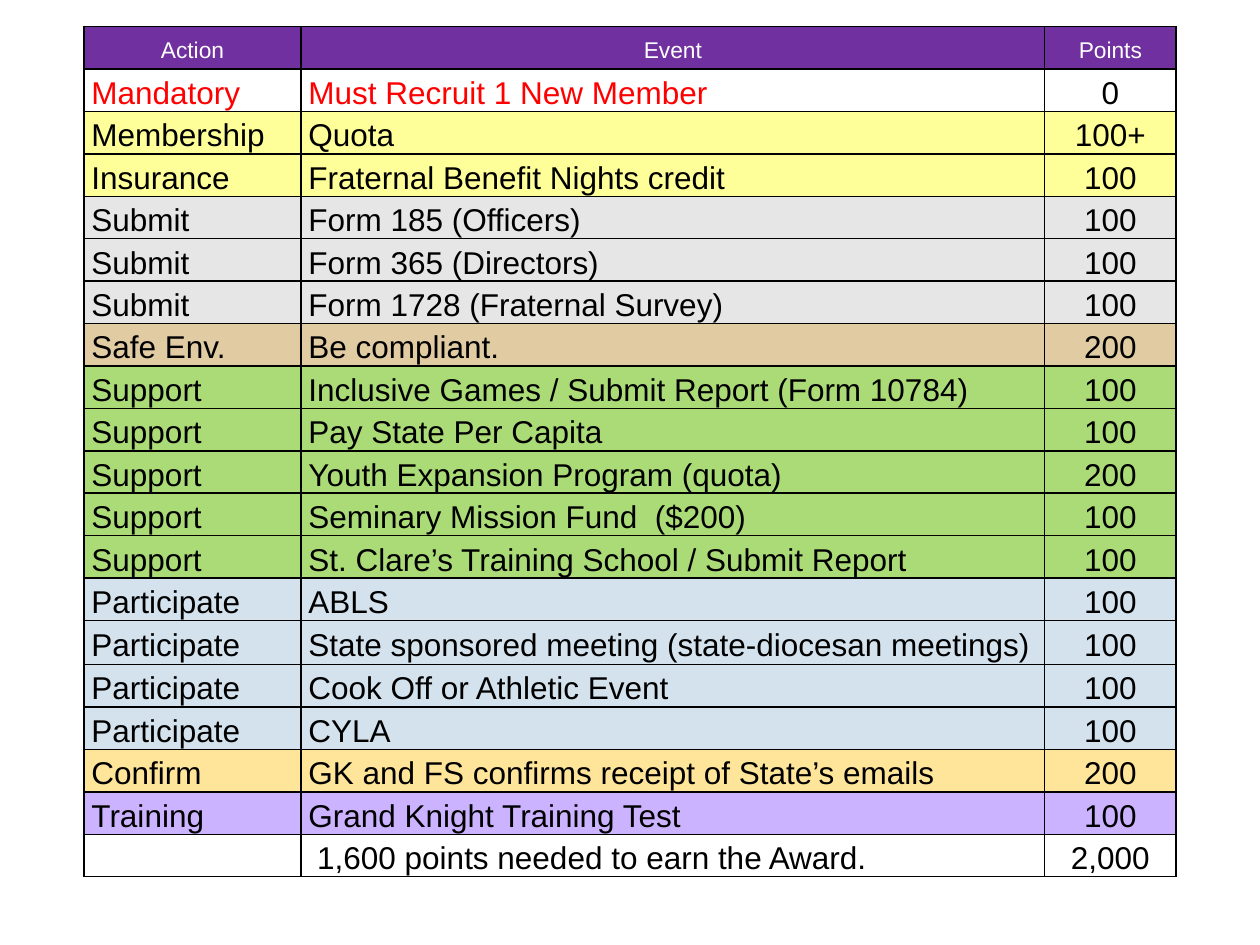
from dataclasses import dataclass
from lxml.etree import SubElement as Sub
from pptx import Presentation
from pptx.dml.color import RGBColor as Rgb
from pptx.enum.text import MSO_ANCHOR as Anchor, PP_ALIGN as Align
from pptx.oxml.ns import qn
from pptx.util import Pt


@dataclass(frozen=True)
class Theme:
    font: str = "Arial"
    head: int = 13
    body: int = 18
    white: str = "FFFFFF"
    black: str = "000000"
    red: str = "FF0000"
    purple: str = "7030A0"
    yellow: str = "FFFF99"
    gray: str = "E7E6E6"
    tan: str = "E0CBA3"
    green: str = "ABDB77"
    blue: str = "D4E2ED"
    gold: str = "FFE599"
    lilac: str = "CCB3FF"


THEME = Theme()
LEFT, TOP = 48, 15.25
COLS = (124, 425, 75)
ROW, TALL = 24.25, 25.25
TALL_ROW = 14
HEAD = ("Action", "Event", "Points")
GROUPS = (
    ("Mandatory", None, (("Must Recruit 1 New Member", "0"),)),
    ("Membership", THEME.yellow, (("Quota", "100+"),)),
    ("Insurance", THEME.yellow, (("Fraternal Benefit Nights credit", "100"),)),
    ("Submit", THEME.gray, (
        ("Form 185 (Officers)", "100"),
        ("Form 365 (Directors)", "100"),
        ("Form 1728 (Fraternal Survey)", "100"),
    )),
    ("Safe Env.", THEME.tan, (("Be compliant.", "200"),)),
    ("Support", THEME.green, (
        ("Inclusive Games / Submit Report (Form 10784)", "100"),
        ("Pay State Per Capita", "100"),
        ("Youth Expansion Program (quota)", "200"),
        ("Seminary Mission Fund  ($200)", "100"),
        ("St. Clare’s Training School / Submit Report", "100"),
    )),
    ("Participate", THEME.blue, (
        ("ABLS", "100"),
        ("State sponsored meeting (state-diocesan meetings)", "100"),
        ("Cook Off or Athletic Event", "100"),
        ("CYLA", "100"),
    )),
    ("Confirm", THEME.gold, (("GK and FS confirms receipt of State’s emails", "200"),)),
    ("Training", THEME.lilac, (("Grand Knight Training Test", "100"),)),
    ("", None, ((" 1,600 points needed to earn the Award.", "2,000"),)),
)


def add_edges(cell):
    props = cell._tc.get_or_add_tcPr()
    for i, side in enumerate(("a:lnL", "a:lnR", "a:lnT", "a:lnB")):
        line = props.makeelement(qn(side), {"w": str(Pt(1))})
        fill = Sub(line, qn("a:solidFill"))
        Sub(fill, qn("a:srgbClr"), val=THEME.black)
        props.insert(i, line)


def set_fill(cell, color):
    if color:
        cell.fill.solid()
        cell.fill.fore_color.rgb = Rgb.from_string(color)
    else:
        cell.fill.background()


def set_text(cell, text, size, color, align):
    cell.vertical_anchor = Anchor.MIDDLE
    cell.margin_left = cell.margin_right = Pt(4.3)
    cell.margin_top, cell.margin_bottom = Pt(0.7), Pt(0)
    para = cell.text_frame.paragraphs[0]
    para.alignment = align
    para.line_spacing = 1.15
    para.space_before = para.space_after = Pt(3)
    if text:
        run = para.add_run()
        run.text = text
        run.font.name = THEME.font
        run.font.size = Pt(size)
        run.font.color.rgb = Rgb.from_string(color)


def fill_row(row, texts, fill, size, colors, aligns):
    for cell, text, color, align in zip(row.cells, texts, colors, aligns):
        set_text(cell, text, size, color, align)
        set_fill(cell, fill)
        add_edges(cell)


def add_grid(slide):
    items = [((action, event, points), fill)
             for action, fill, events in GROUPS for event, points in events]
    count = len(items) + 1
    frame = slide.shapes.add_table(count, len(COLS), Pt(LEFT), Pt(TOP),
                                   Pt(sum(COLS)), Pt(ROW * (count - 1) + TALL))
    table = frame.table
    table.first_row = table.horz_banding = False
    for col, width in zip(table.columns, COLS):
        col.width = Pt(width)
    for i, row in enumerate(table.rows):
        row.height = Pt(TALL if i == TALL_ROW else ROW)
    rows = list(table.rows)
    fill_row(rows[0], HEAD, THEME.purple, THEME.head,
             [THEME.white] * 3, [Align.CENTER] * 3)
    for row, (texts, fill) in zip(rows[1:], items):
        ink = THEME.red if texts[0] == "Mandatory" else THEME.black
        fill_row(row, texts, fill, THEME.body, (ink, ink, THEME.black),
                 (Align.LEFT, Align.LEFT, Align.CENTER))


def main():
    deck = Presentation()
    deck.slide_width, deck.slide_height = Pt(720), Pt(540)
    slide = deck.slides.add_slide(deck.slide_layouts[6])
    add_grid(slide)
    deck.save("out.pptx")


if __name__ == "__main__":
    main()
